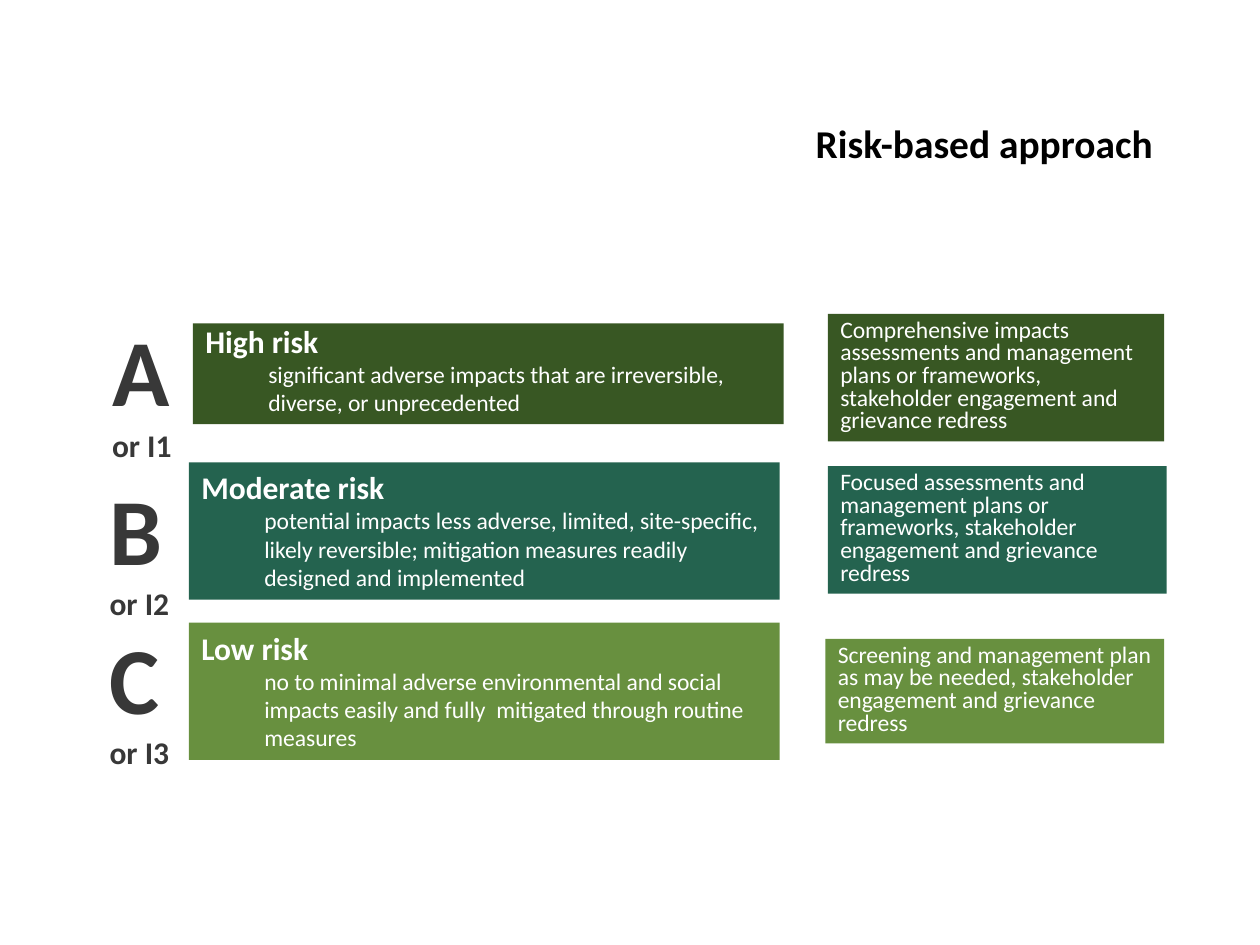
import pptx
import pptx.dml.color
import pptx.enum.shapes
import pptx.enum.text
import pptx.util
from pptx.util import Cm

RGBColor = pptx.dml.color.RGBColor
BLACK = RGBColor(0x00, 0x00, 0x00)
WHITE = RGBColor(0xFF, 0xFF, 0xFF)
CHARCOAL = RGBColor(0x38, 0x38, 0x38)
DARK_GREEN = RGBColor(0x38, 0x57, 0x23)
TEAL = RGBColor(0x24, 0x63, 0x4F)
LIGHT_GREEN = RGBColor(0x68, 0x90, 0x3F)
LEFT = pptx.enum.text.PP_ALIGN.LEFT
RIGHT = pptx.enum.text.PP_ALIGN.RIGHT
MIDDLE = pptx.enum.text.MSO_ANCHOR.MIDDLE

CATEGORIES = [
    ("A", "or I1", (2.01, 6.17, 1.85, 3.33)),
    ("B", "or I2", (1.96, 9.37, 1.85, 3.33)),
    ("C", "or I3", (1.96, 12.37, 1.85, 3.33)),
]
RISKS = [
    ("High risk",
     "significant adverse impacts that are irreversible, diverse, or unprecedented",
     DARK_GREEN, 0.8, (3.89, 6.52, 11.91, 2.03)),
    ("Moderate risk",
     "potential impacts less adverse, limited, site-specific, likely reversible; "
     "mitigation measures readily  designed and implemented",
     TEAL, 1.0, (3.81, 9.32, 11.91, 2.77)),
    ("Low risk",
     "no to minimal adverse environmental and social impacts easily and fully  "
     "mitigated through routine measures",
     LIGHT_GREEN, 1.0, (3.81, 12.55, 11.91, 2.77)),
]
RESPONSES = [
    ("Comprehensive impacts assessments and management plans or frameworks, "
     "stakeholder engagement and grievance redress",
     DARK_GREEN, (16.69, 6.33, 6.78, 2.57)),
    ("Focused assessments and management plans or frameworks, "
     "stakeholder engagement and grievance redress",
     TEAL, (16.69, 9.4, 6.83, 2.57)),
    ("Screening and management plan as may be needed, "
     "stakeholder engagement and grievance redress",
     LIGHT_GREEN, (16.64, 12.88, 6.83, 2.11)),
]


def format_paragraph(paragraph, size, color, bold=False, spacing=1.0, alignment=LEFT):
    paragraph.alignment = alignment
    paragraph.line_spacing = spacing
    for run in paragraph.runs:
        run.font.name = "Calibri"
        run.font.size = pptx.util.Pt(size)
        run.font.bold = bold
        run.font.color.rgb = color


def add_text_box(slide, position, text):
    text_frame = slide.shapes.add_textbox(*map(Cm, position)).text_frame
    text_frame.word_wrap = True
    text_frame.text = text
    return text_frame


def add_filled_box(slide, position, text, color):
    rectangle = pptx.enum.shapes.MSO_SHAPE.RECTANGLE
    shape = slide.shapes.add_shape(rectangle, *map(Cm, position))
    shape.shadow.inherit = False
    shape.fill.solid()
    shape.fill.fore_color.rgb = color
    shape.line.fill.background()
    text_frame = shape.text_frame
    text_frame.word_wrap = True
    text_frame.vertical_anchor = pptx.enum.text.MSO_ANCHOR.TOP
    text_frame.text = text
    return text_frame


def add_title(slide):
    text_frame = add_text_box(slide, (5.26, 2.16, 18.24, 1.57), "Risk-based approach")
    text_frame.vertical_anchor = MIDDLE
    format_paragraph(text_frame.paragraphs[0], 22.5, BLACK, True, 0.9, RIGHT)


def add_category(slide, letter, alternative, position):
    text_frame = add_text_box(slide, position, f"{letter}\n{alternative}")
    for paragraph, size in zip(text_frame.paragraphs, (54, 18)):
        format_paragraph(paragraph, size, CHARCOAL, True)


def add_risk(slide, heading, description, color, spacing, position):
    text_frame = add_filled_box(slide, position, f"{heading}\n{description}", color)
    heading_paragraph, description_paragraph = text_frame.paragraphs
    format_paragraph(heading_paragraph, 18, WHITE, True, spacing)
    description_paragraph.level = 1
    format_paragraph(description_paragraph, 13.5, WHITE)
    properties = description_paragraph._p.get_or_add_pPr()
    properties.set("marL", str(Cm(1.27)))
    properties.set("indent", "0")


def add_response(slide, text, color, position):
    text_frame = add_filled_box(slide, position, text, color)
    format_paragraph(text_frame.paragraphs[0], 13.5, WHITE, spacing=0.8)


def main():
    presentation = pptx.Presentation()
    presentation.slide_width = Cm(25.4)
    presentation.slide_height = Cm(19.05)
    slide = presentation.slides.add_slide(presentation.slide_layouts[6])
    add_title(slide)
    for risk in RISKS:
        add_risk(slide, *risk)
    for category in CATEGORIES:
        add_category(slide, *category)
    for response in RESPONSES:
        add_response(slide, *response)
    presentation.save("out.pptx")


if __name__ == "__main__":
    main()
